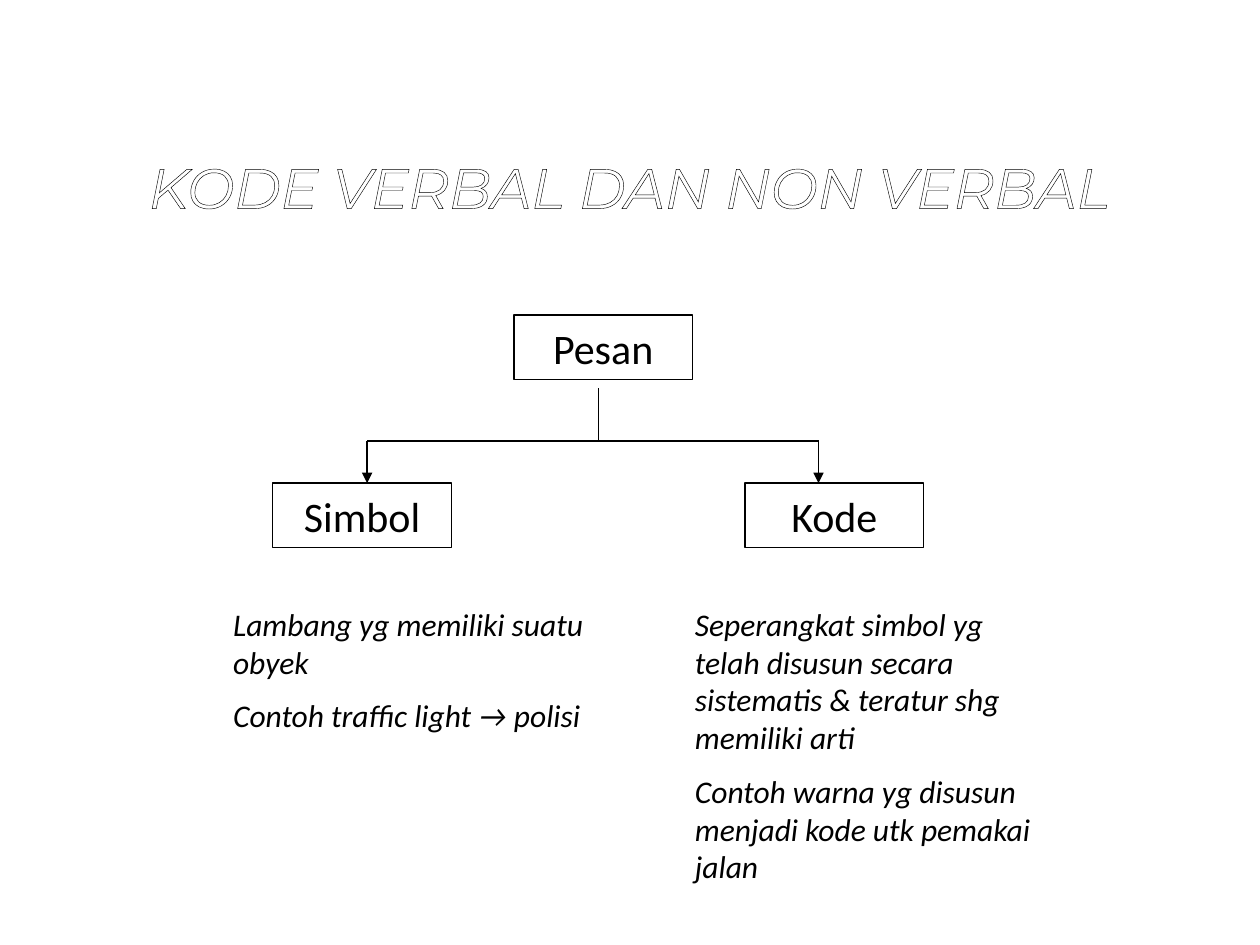
import pptx
import pptx.util
import pptx.oxml
import pptx.oxml.ns
from pptx.dml.color import RGBColor
from pptx.enum.shapes import MSO_CONNECTOR, MSO_SHAPE
from pptx.enum.text import MSO_ANCHOR, MSO_AUTO_SIZE, PP_ALIGN
from pptx.util import Cm, Pt

COLORS = {"ink": "000000", "paper": "FFFFFF"}
NS = pptx.oxml.ns.nsdecls("a")
NODE_W, NODE_H = 3.6, 1.3


def rgb(name):
    return RGBColor.from_string(COLORS[name])


def write(tf, *lines, size=18, font="Calibri", color="ink", italic=False,
          align=PP_ALIGN.LEFT, wrap=True, anchor=MSO_ANCHOR.TOP, gap=0):
    tf.auto_size = MSO_AUTO_SIZE.NONE
    tf.word_wrap = wrap
    tf.vertical_anchor = anchor
    for i, line in enumerate(lines):
        p = tf.paragraphs[0] if i == 0 else tf.add_paragraph()
        p.alignment = align
        p.space_before = Pt(gap if i else 0)
        r = p.add_run()
        r.text = line
        r.font.size, r.font.name, r.font.italic = Pt(size), font, italic
        r.font.color.rgb = rgb(color)


def add_title(s, x, y, w, h):
    sp = s.shapes.title
    sp.left, sp.top, sp.width, sp.height = Cm(x), Cm(y), Cm(w), Cm(h)
    write(sp.text_frame, "KODE VERBAL DAN NON VERBAL", size=32,
          font="Montserrat", color="paper", italic=True,
          align=PP_ALIGN.CENTER, wrap=False, anchor=MSO_ANCHOR.MIDDLE)
    # Outlined letters
    r_pr = sp.text_frame.paragraphs[0].runs[0].font._element
    r_pr.insert(0, pptx.oxml.parse_xml(
        f'<a:ln {NS} w="{Pt(0.75)}"><a:solidFill>'
        f'<a:srgbClr val="{COLORS["ink"]}"/></a:solidFill></a:ln>'))


def add_node(s, x, y, label):
    sp = s.shapes.add_shape(MSO_SHAPE.RECTANGLE, Cm(x), Cm(y), Cm(NODE_W), Cm(NODE_H))
    sp.shadow.inherit = False
    sp.fill.background()
    sp.line.color.rgb = rgb("ink")
    sp.line.width = Pt(0.75)
    write(sp.text_frame, label, size=24, align=PP_ALIGN.CENTER,
          anchor=MSO_ANCHOR.MIDDLE)


def add_line(s, x1, y1, x2, y2, arrow=False):
    c = s.shapes.add_connector(MSO_CONNECTOR.STRAIGHT, Cm(x1), Cm(y1), Cm(x2), Cm(y2))
    c.line.color.rgb = rgb("ink")
    c.line.width = Pt(0.75)
    if arrow:
        c.line._get_or_add_ln().append(
            pptx.oxml.parse_xml(f'<a:tailEnd {NS} type="triangle"/>'))
    c._element.spPr.append(pptx.oxml.parse_xml(f"<a:effectLst {NS}/>"))


def add_tree(s, x, y):
    # Boxes
    child_y = y + 3.39
    add_node(s, x + 4.86, y, "Pesan")
    add_node(s, x, child_y, "Simbol")
    add_node(s, x + 9.52, child_y, "Kode")
    # Branches
    trunk, left, right, bar_y = x + 6.56, x + 1.9, x + 11, y + 2.54
    add_line(s, trunk, y + 1.48, trunk, bar_y)
    add_line(s, left, bar_y, right, bar_y)
    for end in (left, right):
        add_line(s, end, bar_y, end, child_y, arrow=True)


def add_description(s, x, y, w, h, *lines):
    sp = s.shapes.add_textbox(Cm(x), Cm(y), Cm(w), Cm(h))
    write(sp.text_frame, *lines, italic=True, gap=9)


def main():
    prs = pptx.Presentation()
    prs.slide_width, prs.slide_height = Cm(25.4), Cm(19.05)
    s = prs.slides.add_slide(prs.slide_layouts[5])
    add_title(s, 2.29, 2.97, 20.8, 1.57)
    add_tree(s, 5.5, 6.35)
    # Explanations under the two branches
    add_description(s, 4.45, 12.07, 7.62, 3.68,
                    "Lambang yg memiliki suatu obyek",
                    "Contoh traffic light → polisi")
    add_description(s, 13.76, 12.07, 7.62, 5.97,
                    "Seperangkat simbol yg telah disusun secara sistematis & teratur shg memiliki arti",
                    "Contoh warna yg disusun menjadi kode utk pemakai jalan")
    prs.save("out.pptx")


if __name__ == "__main__":
    main()
